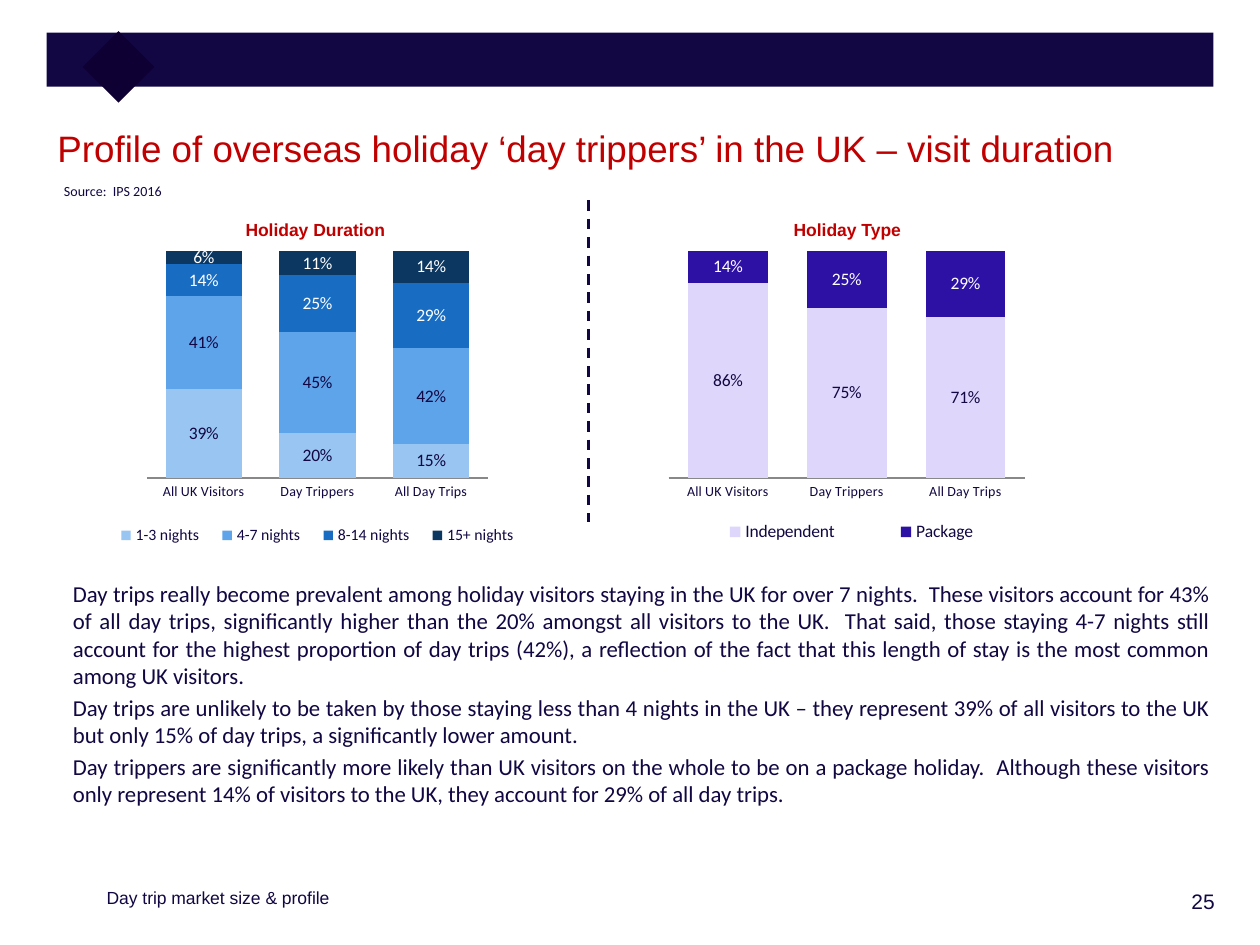
from lxml import etree
from pptx import Presentation
from pptx import util as u
from pptx.chart.data import CategoryChartData
from pptx.dml.color import RGBColor
from pptx.enum import chart as ch, dml, shapes, text
from pptx.oxml.ns import qn

HUE = {
    "navy": "120742", "gem": "0E0033", "red": "C00000", "white": "FFFFFF", "axis": "888888",
    "sky": "98C5F2", "azure": "5EA4EB", "blue": "186DC3", "deep": "0C3761",
    "lilac": "DED7FB", "violet": "2D11A5",
}


def style(font, hue="navy", **form):
    for key, val in form.items():
        setattr(font, key, u.Pt(val) if key == "size" else val)
    font.color.rgb = RGBColor.from_string(HUE[hue])


def place(node, spot, inner=False):
    """Give a plot area or legend a fixed spot, as fractions of the chart."""
    for old in node.findall(qn("c:layout")):
        node.remove(old)
    lay = etree.Element(qn("c:layout"))
    man = etree.SubElement(lay, qn("c:manualLayout"))
    parts = [("layoutTarget", "inner")] if inner else []
    parts += [("xMode", "edge"), ("yMode", "edge"), *zip("xywh", spot)]
    for tag, val in parts:
        etree.SubElement(man, qn("c:" + tag)).set("val", str(val))
    node.insert(0 if inner else 1, lay)


deck = Presentation()
deck.slide_width, deck.slide_height = u.Cm(25.4), u.Cm(19.05)
slide = deck.slides.add_slide(deck.slide_layouts[6])

# Banner with its diamond
for box, turn, hue in [
    ((0.94, 0.66, 23.52, 1.09), 0, "navy"),
    ((1.88, 0.84, 1.02, 1.02), 45, "gem"),
]:
    bar = slide.shapes.add_shape(shapes.MSO_SHAPE.RECTANGLE, *map(u.Cm, box))
    bar.rotation = turn
    bar.shadow.inherit = False
    bar.fill.solid()
    bar.fill.fore_color.rgb = RGBColor.from_string(HUE[hue])
    bar.line.fill.background()

# Charts: box, legend size, legend spot, series (name, values, fill, label colour)
cats = ["All UK Visitors", "Day Trippers", "All Day Trips"]
charts = [
    ((12.37, 4.67, 9.4, 6.88), 10, (0.12, 0.83, 0.78, 0.1), [
        ("Independent", (0.86, 0.75, 0.71), "lilac", "navy"),
        ("Package", (0.14, 0.25, 0.29), "violet", "white"),
    ]),
    ((1.9, 4.67, 9, 6.88), 9, (0.02, 0.84, 0.96, 0.1), [
        ("1-3 nights", (0.39, 0.2, 0.15), "sky", "navy"),
        ("4-7 nights", (0.41, 0.45, 0.42), "azure", "navy"),
        ("8-14 nights", (0.14, 0.25, 0.29), "blue", "white"),
        ("15+ nights", (0.06, 0.11, 0.14), "deep", "white"),
    ]),
]
for box, size, spot, rows in charts:
    data = CategoryChartData(number_format="0%")
    data.categories = cats
    for name, vals, _, _ in rows:
        data.add_series(name, vals)
    chart = slide.shapes.add_chart(
        ch.XL_CHART_TYPE.COLUMN_STACKED_100, *map(u.Cm, box), data).chart
    style(chart.font, name="Calibri", size=14)
    chart.has_title = False

    plot = chart.plots[0]
    for key, val in {"gap_width": 49, "overlap": 100, "vary_by_categories": False}.items():
        setattr(plot, key, val)
    for row, (_, _, hue, ink) in zip(plot.series, rows):
        row.format.fill.solid()
        row.format.fill.fore_color.rgb = RGBColor.from_string(HUE[hue])
        tags = row.data_labels
        for key, val in {"show_value": True, "number_format": "0%",
                         "number_format_is_linked": False}.items():
            setattr(tags, key, val)
        style(tags.font, ink, name="Calibri", size=10)

    chart.value_axis.visible = False
    chart.value_axis.has_major_gridlines = False
    axis = chart.category_axis
    axis.major_tick_mark = ch.XL_TICK_MARK.NONE
    axis.format.line.color.rgb = RGBColor.from_string(HUE["axis"])
    style(axis.tick_labels.font, name="Calibri", size=8)

    chart.has_legend = True
    key = chart.legend
    key.position = ch.XL_LEGEND_POSITION.BOTTOM
    key.include_in_layout = False
    style(key.font, name="Calibri", size=size)
    place(chart.plots[0]._element.getparent(), (0.118, 0.056, 0.764, 0.666), inner=True)
    place(key._element, spot)

# Dashed divider
rule = slide.shapes.add_connector(
    shapes.MSO_CONNECTOR.STRAIGHT, *map(u.Cm, (11.86, 4.04, 11.86, 10.52)))
rule.line.color.rgb = RGBColor.from_string(HUE["navy"])
rule.line.width = u.Pt(1.5)
rule.line.dash_style = dml.MSO_LINE.DASH
etree.SubElement(rule._element.spPr, qn("a:effectLst"))

# Texts: box, alignment, font format, paragraphs
left, right, full = text.PP_ALIGN.LEFT, text.PP_ALIGN.RIGHT, text.PP_ALIGN.JUSTIFY
head = {"name": "Arial", "size": 10, "bold": True, "hue": "red"}
notes = [
    ((0.91, 2.41, 24.49, 1.55), left, {"name": "Arial", "size": 21, "hue": "red"},
     ["Profile of overseas holiday ‘day trippers’ in the UK – visit duration"]),
    ((1.04, 3.56, 4.29, 0.48), left, {"name": "Calibri", "size": 8}, ["Source:  IPS 2016"]),
    ((4.7, 4.29, 3.43, 0.79), left, head, ["Holiday Duration"]),
    ((15.75, 4.29, 3, 0.79), left, head, ["Holiday Type"]),
    ((1.22, 11.56, 23.39, 5.16), full, {"name": "Calibri", "size": 13}, [
        "Day trips really become prevalent among holiday visitors staying in the UK for over "
        "7 nights.  These visitors account for 43% of all day trips, significantly higher than "
        "the 20% amongst all visitors to the UK.  That said, those staying 4-7 nights still "
        "account for the highest proportion of day trips (42%), a reflection of the fact that "
        "this length of stay is the most common among UK visitors.",
        "Day trips are unlikely to be taken by those staying less than 4 nights in the UK – "
        "they represent 39% of all visitors to the UK but only 15% of day trips, a "
        "significantly lower amount.",
        "Day trippers are significantly more likely than UK visitors on the whole to be on a "
        "package holiday.  Although these visitors only represent 14% of visitors to the UK, "
        "they account for 29% of all day trips.",
    ]),
    ((1.9, 17.75, 6.78, 0.76), left, {"name": "Arial", "size": 10},
     ["Day trip market size & profile"]),
    ((21.67, 17.78, 3.07, 0.91), right, {"name": "Arial", "size": 12}, ["25"]),
]
for box, side, form, lines in notes:
    frame = slide.shapes.add_textbox(*map(u.Cm, box)).text_frame
    frame.word_wrap = True
    for num, line in enumerate(lines):
        para = frame.add_paragraph() if num else frame.paragraphs[0]
        para.text = line
        para.alignment = side
        if num:
            para.space_before = u.Pt(2.6)
        style(para.font, **form)

deck.save("out.pptx")
